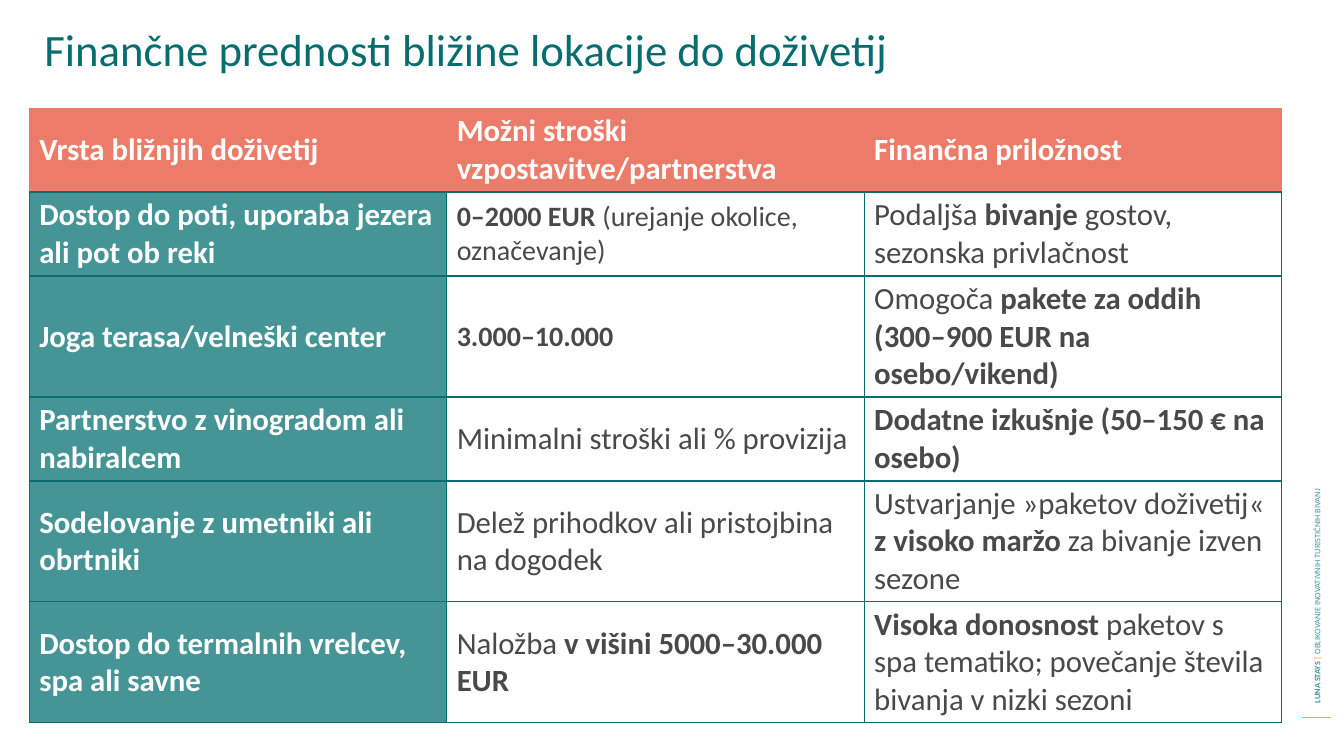
from lxml import etree
from pptx import Presentation
from pptx.dml.color import RGBColor
from pptx.enum.shapes import MSO_CONNECTOR
from pptx.enum.text import MSO_ANCHOR, PP_ALIGN
from pptx.oxml.ns import qn
from pptx.util import Pt

MIDDLE = MSO_ANCHOR.MIDDLE
LEFT = PP_ALIGN.LEFT
STRAIGHT = MSO_CONNECTOR.STRAIGHT

FONT = "Calibri"
TEAL_DARK = RGBColor(0x08, 0x6D, 0x6E)
TEAL = RGBColor(0x45, 0x95, 0x97)
CORAL = RGBColor(0xEC, 0x7C, 0x69)
ORANGE = RGBColor(0xFB, 0xA6, 0x3B)
GREY = RGBColor(0x49, 0x49, 0x49)
WHITE = RGBColor(0xFF, 0xFF, 0xFF)

TITLE = "Finančne prednosti bližine lokacije do doživetij"
FOOTER = [
    ("LUNA STAYS ", True, TEAL),
    ("| ", True, ORANGE),
    ("OBLIKOVANJE INOVATIVNIH TURISTIČNIH BIVANJ", False, TEAL),
]
HEADERS = [
    "Vrsta bližnjih doživetij",
    "Možni stroški vzpostavitve/partnerstva",
    "Finančna priložnost",
]
EXPERIENCES = [
    ("Dostop do poti, uporaba jezera ali pot ob reki",
     [("0–2000 EUR ", True), ("(urejanje okolice, označevanje)", False)],
     [("Podaljša ", False), ("bivanje", True), (" gostov, sezonska privlačnost", False)]),
    ("Joga terasa/velneški center",
     [("3.000–10.000", True)],
     [("Omogoča ", False), ("pakete za oddih (300–900 EUR na osebo/vikend)", True)]),
    ("Partnerstvo z vinogradom ali nabiralcem",
     [("Minimalni stroški ali % provizija", False)],
     [("Dodatne izkušnje (50–150 € na osebo)", True)]),
    ("Sodelovanje z umetniki ali obrtniki",
     [("Delež prihodkov ali pristojbina na dogodek", False)],
     [("Ustvarjanje »paketov doživetij« ", False), ("z visoko maržo ", True),
      ("za bivanje izven sezone", False)]),
    ("Dostop do termalnih vrelcev, spa ali savne",
     [("Naložba", False), (" v višini 5000–30.000 EUR", True)],
     [("Visoka donosnost ", True),
      ("paketov s spa tematiko; povečanje števila bivanja v nizki sezoni", False)]),
]
ROW_HEIGHTS = [60, 60, 86.4, 60, 86.4, 86.4]
COLUMN_WIDTH = 298.2
TEXT_SIZE = 22
SMALL_SIZE = 20
SMALL_COST_ROWS = (1, 2)
BORDER_SIDES = ("a:lnL", "a:lnR", "a:lnT", "a:lnB")


def write_runs(paragraph, runs, size):
    paragraph.font.name = FONT
    paragraph.font.size = Pt(size)
    for text, bold, color in runs:
        run = paragraph.add_run()
        run.text = text
        run.font.bold = bold
        run.font.color.rgb = color


def set_borders(cell, visible_sides):
    properties = cell._tc.get_or_add_tcPr()
    for position, side in enumerate(BORDER_SIDES):
        line = etree.Element(qn(side), w=str(Pt(1)))
        if side in visible_sides:
            fill = etree.SubElement(line, qn("a:solidFill"))
            etree.SubElement(fill, qn("a:srgbClr"), val=str(TEAL_DARK))
        else:
            etree.SubElement(line, qn("a:noFill"))
        properties.insert(position, line)


def fill_cell(cell, runs, size, color, visible_sides):
    cell.vertical_anchor = MIDDLE
    cell.margin_top = cell.margin_bottom = Pt(3)
    if color is None:
        cell.fill.background()
    else:
        cell.fill.solid()
        cell.fill.fore_color.rgb = color
    write_runs(cell.text_frame.paragraphs[0], runs, size)
    set_borders(cell, visible_sides)


def add_title(slide):
    title = slide.shapes.title
    title.left, title.top, title.width, title.height = Pt(24.5), Pt(11.5), Pt(821), Pt(46)
    title.text_frame.text = TITLE
    title.text_frame.vertical_anchor = MIDDLE
    paragraph = title.text_frame.paragraphs[0]
    paragraph.alignment = LEFT
    paragraph.font.name = FONT
    paragraph.font.size = Pt(32)
    paragraph.font.color.rgb = TEAL_DARK


def add_footer(slide):
    line = slide.shapes.add_connector(STRAIGHT, Pt(930.2), Pt(512.6), Pt(951.1), Pt(512.6))
    line.line.color.rgb = ORANGE
    line.line.width = Pt(0.75)
    etree.SubElement(line._element.spPr, qn("a:effectLst"))
    footer = slide.shapes.add_textbox(Pt(733), Pt(294.5), Pt(415.4), Pt(14.4))
    footer.rotation = 270
    footer.text_frame.word_wrap = True
    footer.text_frame.vertical_anchor = MIDDLE
    write_runs(footer.text_frame.paragraphs[0], FOOTER, 6)


def add_experience_table(slide):
    frame = slide.shapes.add_table(
        len(ROW_HEIGHTS), len(HEADERS), Pt(20.9), Pt(77.2),
        Pt(COLUMN_WIDTH * len(HEADERS)), Pt(sum(ROW_HEIGHTS)))
    table = frame.table
    table.horz_banding = False
    for column in table.columns:
        column.width = Pt(COLUMN_WIDTH)
    for row, height in zip(table.rows, ROW_HEIGHTS):
        row.height = Pt(height)
    for column, header in enumerate(HEADERS):
        fill_cell(table.cell(0, column), [(header, True, WHITE)], TEXT_SIZE, CORAL, ("a:lnB",))
    for row, (experience, cost, opportunity) in enumerate(EXPERIENCES, 1):
        fill_cell(table.cell(row, 0), [(experience, True, WHITE)], TEXT_SIZE, TEAL, BORDER_SIDES)
        cost_size = SMALL_SIZE if row in SMALL_COST_ROWS else TEXT_SIZE
        for column, (parts, size) in enumerate([(cost, cost_size), (opportunity, TEXT_SIZE)], 1):
            runs = [(text, bold, GREY) for text, bold in parts]
            fill_cell(table.cell(row, column), runs, size, None, BORDER_SIDES)


def main():
    presentation = Presentation()
    presentation.slide_width, presentation.slide_height = Pt(960), Pt(540)
    slide = presentation.slides.add_slide(presentation.slide_layouts[5])
    add_footer(slide)
    add_title(slide)
    add_experience_table(slide)
    presentation.save("out.pptx")


if __name__ == "__main__":
    main()
